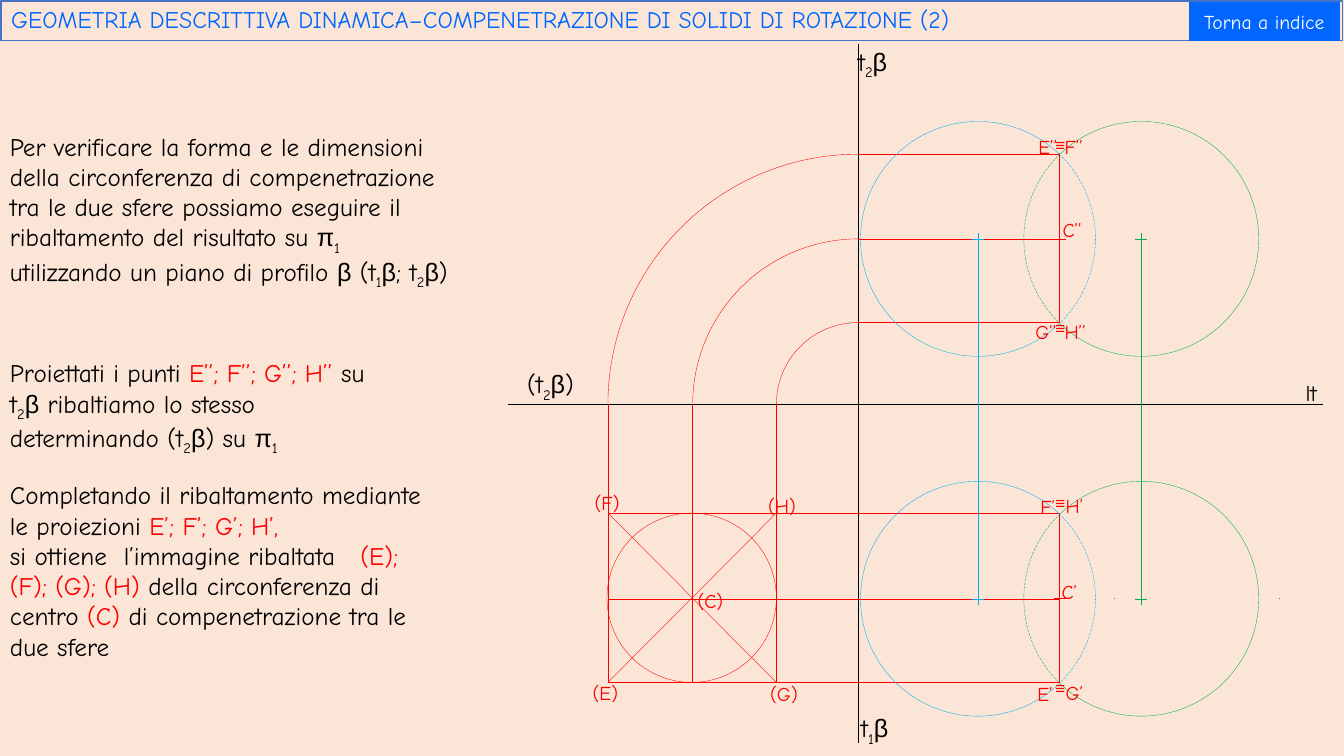
from dataclasses import dataclass
from itertools import groupby

from lxml import etree
from pptx import Presentation, util as u
from pptx.dml.color import RGBColor
from pptx.enum import dml, shapes, text
from pptx.oxml.ns import qn


@dataclass(frozen=True)
class Theme:
    background: str = "FBE5D6"
    ink: str = "000000"
    red: str = "FF0000"
    green: str = "00B050"
    cyan: str = "00B0F0"
    frame: str = "4472C4"
    accent: str = "0066FF"
    white: str = "FFFFFF"
    font: str = "Comic Neue"
    symbol_font: str = "Arial"
    title: int = 17
    body: int = 18
    axis: int = 16
    label: int = 14
    symbol: int = 12
    thin: float = 0.25
    medium: float = 0.5
    border: float = 0.75


class Drawing:
    def __init__(self, prs, theme):
        self.t = theme
        self.s = prs.slides.add_slide(prs.slide_layouts[5])
        self.s.background.fill.solid()
        self.s.background.fill.fore_color.rgb = RGBColor.from_string(theme.background)

    def run(self, p, content, size, color, font=None, subscript=False):
        r = p.add_run()
        r.text = content
        r.font.size = u.Pt(size)
        r.font.name = font or self.t.font
        r.font.color.rgb = RGBColor.from_string(color)
        if subscript:
            r.font._element.set("baseline", "-25000")

    def stroke(self, sp, color, width):
        sp.line.color.rgb = RGBColor.from_string(color)
        sp.line.width = u.Pt(width)

    def title(self, content, x, y, w, h):
        sp = self.s.shapes.title
        sp.left, sp.top, sp.width, sp.height = map(u.Inches, (x, y, w, h))
        self.stroke(sp, self.t.frame, self.t.border)
        tf = sp.text_frame
        tf.auto_size = text.MSO_AUTO_SIZE.NONE
        tf.vertical_anchor = text.MSO_ANCHOR.MIDDLE
        p = tf.paragraphs[0]
        p.alignment = text.PP_ALIGN.LEFT
        p.line_spacing = 0.9
        self.run(p, content, self.t.title, self.t.accent)

    def text(self, content, x, y, w, h, size, colors):
        sp = self.s.shapes.add_textbox(*map(u.Inches, (x, y, w, h)))
        tf = sp.text_frame
        tf.word_wrap = True
        tf.auto_size = text.MSO_AUTO_SIZE.SHAPE_TO_FIT_TEXT
        for i, row in enumerate(content.split("\n")):
            p = tf.add_paragraph() if i else tf.paragraphs[0]
            for j, part in enumerate(row.split("|")):
                for kind, chars in groupby(part, self.kind):
                    font = self.t.symbol_font if kind == "symbol" else self.t.font
                    self.run(p, "".join(chars), size, colors[j % len(colors)],
                             font, kind == "subscript")
        return tf

    @staticmethod
    def kind(char):
        if char in "πβ≡":
            return "symbol"
        return "subscript" if char.isdigit() else "plain"

    def label(self, content, x, y, w, size, color):
        self.text(content, x, y, w, 0.34, size, [color]).margin_right = 0

    def line(self, x1, y1, x2, y2, color, width=None):
        c = self.s.shapes.add_connector(
            shapes.MSO_CONNECTOR.STRAIGHT, *map(u.Inches, (x1, y1, x2, y2)))
        self.stroke(c, color, width or self.t.thin)
        etree.SubElement(c._element.spPr, qn("a:effectLst"))

    def outline(self, kind, cx, cy, radius, color):
        sp = self.s.shapes.add_shape(
            kind, *map(u.Inches, (cx - radius, cy - radius, 2 * radius, 2 * radius)))
        sp.shadow.inherit = False
        sp.fill.background()
        self.stroke(sp, color, self.t.thin)
        return sp

    def arc(self, cx, cy, radius, start, end, color, dashed=False, mirrored=False):
        sp = self.outline(shapes.MSO_SHAPE.ARC, cx, cy, radius, color)
        sp.adjustments[0] = start * 0.6
        sp.adjustments[1] = end * 0.6
        if dashed:
            sp.line.dash_style = dml.MSO_LINE.LONG_DASH
        if mirrored:
            sp._element.spPr.find(qn("a:xfrm")).set("flipH", "1")

    def sphere(self, cx, cy, radius, color, mirrored):
        self.arc(cx, cy, radius, 226.46, 134.03, color, mirrored=mirrored)
        self.arc(cx, cy, radius, 134.91, 226.73, color, True, mirrored)
        self.line(cx - 0.06, cy, cx + 0.06, cy, color)
        self.line(cx, cy - 0.06, cx, cy + 0.06, color)

    def button(self, content, x, y, w, h):
        sp = self.s.shapes.add_shape(
            shapes.MSO_SHAPE.ACTION_BUTTON_CUSTOM, *map(u.Inches, (x, y, w, h)))
        sp.shadow.inherit = False
        sp.fill.solid()
        sp.fill.fore_color.rgb = RGBColor.from_string(self.t.accent)
        sp.line.fill.background()
        tf = sp.text_frame
        tf.vertical_anchor = text.MSO_ANCHOR.MIDDLE
        p = tf.paragraphs[0]
        p.alignment = text.PP_ALIGN.CENTER
        self.run(p, content, self.t.label, self.t.white)


def main():
    prs = Presentation()
    prs.slide_width, prs.slide_height = u.Inches(13.33), u.Inches(7.5)
    t = Theme()
    d = Drawing(prs, t)

    d.title("GEOMETRIA DESCRITTIVA DINAMICA–COMPENETRAZIONE DI SOLIDI DI ROTAZIONE (2)",
            0.01, 0.01, 13.31, 0.39)

    axis_x, ground_y, chord_x = 8.51, 4.01, 10.51
    d.line(5.04, ground_y, 13.12, ground_y, t.ink)
    d.line(axis_x, 0.44, axis_x, 7.37, t.ink)

    plan_rows = (5.09, 5.94, 6.77)
    for radius, plan_y in zip((2.48, 1.64, 0.81), plan_rows):
        folded_x, front_y = axis_x - radius, ground_y - radius
        d.arc(axis_x, ground_y, radius, 180, 270, t.red)
        d.line(chord_x, front_y, axis_x, front_y, t.red)
        d.line(folded_x, ground_y, folded_x, plan_rows[-1], t.red)
        d.line(chord_x, plan_y, axis_x - 2.48, plan_y, t.red)

    d.line(6.03, 5.09, 7.7, 6.77, t.red)
    d.line(6.03, 6.77, 7.7, 5.09, t.red)
    d.outline(shapes.MSO_SHAPE.OVAL, 6.86, 5.93, 0.84, t.red)

    for top, middle, bottom in ((1.52, 2.37, 3.2), plan_rows):
        d.line(chord_x, top, chord_x, bottom, t.red, t.medium)
        d.line(chord_x - 0.06, middle, chord_x + 0.06, middle, t.red, t.medium)

    for cx, color, mirrored in ((11.32, t.green, False), (9.7, t.cyan, True)):
        d.line(cx, 2.37, cx, 5.94, color)
        for cy in (2.37, 5.94):
            d.sphere(cx, cy, 1.165, color, mirrored)
    for x in (11.05, 12.69):
        d.line(x, 5.94, x + 0.01, 5.94, t.frame, t.medium)

    for content, x, y in (
        ("C’’", 10.44, 2.11), ("C’", 10.43, 5.7),
        ("E’’", 10.2, 1.29), ("F’’", 10.46, 1.29),
        ("G’’", 10.17, 3.12), ("H’’", 10.46, 3.12),
        ("F’", 10.22, 4.86), ("H’", 10.47, 4.85),
        ("E’", 10.19, 6.72), ("G’", 10.47, 6.71),
        ("(C)", 6.82, 5.79), ("(H)", 7.52, 4.85), ("(G)", 7.54, 6.72),
        ("(F)", 5.8, 4.82), ("(E)", 5.78, 6.71),
    ):
        d.label(content, x, y, 0.51, t.label, t.red)
    for y in (1.29, 3.1, 4.84, 6.67):
        d.label("≡", 10.37, y, 0.34, t.symbol, t.red)

    d.label("lt", 12.85, 3.71, 0.48, t.axis, t.ink)
    for content, x, y in (("t1β", 8.44, 7.02), ("t2β", 8.41, 0.41), ("(t2β)", 5.13, 3.61)):
        d.label(content, x, y, 0.79, t.body, t.ink)

    for content, y, w, h in (
        ("Per verificare la forma e le dimensioni della circonferenza di compenetrazione "
         "tra le due sfere possiamo eseguire il ribaltamento del risultato su π1 "
         "utilizzando un piano di profilo β (t1β; t2β)", 1.25, 4.54, 1.92),
        ("Proiettati i punti |E’’; F’’; G’’; H’’ |su t2β ribaltiamo lo stesso "
         "determinando (t2β) su π1", 3.5, 3.96, 1.01),
        ("Completando il ribaltamento mediante le proiezioni |E’; F’; G’; H’,\n"
         "si ottiene  l’immagine ribaltata   |(E); (F); (G); (H) |della circonferenza "
         "di centro |(C) |di compenetrazione tra le due sfere", 4.71, 4.29, 1.92),
    ):
        d.text(content, 0, y, w, h, t.body, [t.ink, t.red])

    d.button("Torna a indice", 11.79, 0.02, 1.5, 0.39)
    prs.save("out.pptx")


if __name__ == "__main__":
    main()
